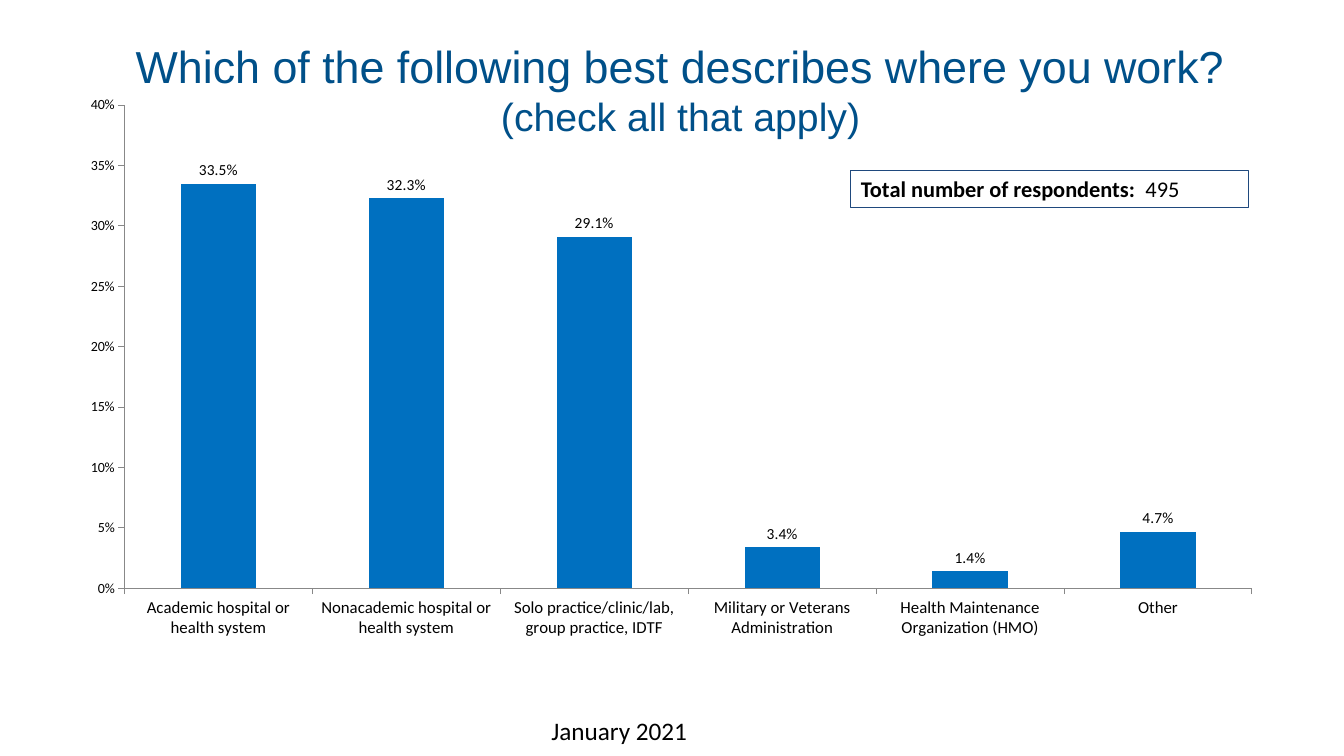
from lxml import etree
from pptx import Presentation
from pptx.chart.data import CategoryChartData
from pptx.dml.color import RGBColor
from pptx.enum.chart import XL_CHART_TYPE as ChartType, XL_LABEL_POSITION as LabelPosition
from pptx.enum.chart import XL_TICK_MARK as TickMark
from pptx.enum.shapes import MSO_SHAPE as Shape
from pptx.enum.text import MSO_ANCHOR as Anchor, PP_ALIGN as Align
from pptx.oxml.ns import qn
from pptx.util import Inches, Pt

# Content
TITLE = [("Which of the following best describes where you work? ", 32, False),
         ("(check all that apply)", 28, False)]
RESPONDENTS = [("Total number of respondents:  ", 16, True), ("495", 16, False)]
DATE = [("January 2021", 18, False)]
WORKPLACES = {
    "Academic hospital or health system": 0.335,
    "Nonacademic hospital or health system": 0.323,
    "Solo practice/clinic/lab, group practice, IDTF": 0.291,
    "Military or Veterans Administration": 0.034,
    "Health Maintenance Organization (HMO)": 0.014,
    "Other": 0.047,
}

# Places in inches: left, top, width, height
TITLE_AREA = (1, 0.16, 11.5, 1.45)
CHART_AREA = (0.67, 0.86, 12, 5.58)
RESPONDENTS_AREA = (8.44, 1.69, 3.94, 0.37)
DATE_AREA = (5.37, 7.05, 4.22, 0.4)
PLOT_SHARES = {"x": 0.047, "y": 0.033, "w": 0.932, "h": 0.859}

TITLE_BLUE = RGBColor(0x00, 0x50, 0x89)
BAR_BLUE = RGBColor(0x00, 0x70, 0xC0)
BORDER_BLUE = RGBColor(0x1F, 0x49, 0x7D)
AXIS_GRAY = RGBColor(0x88, 0x88, 0x88)
BLACK = RGBColor(0, 0, 0)


def place(area):
    return [Inches(length) for length in area]


def style_font(font, size, color=BLACK, name="Calibri"):
    font.size, font.name, font.color.rgb = Pt(size), name, color


def write(box, spans, color=BLACK, name="Calibri", align=Align.LEFT, anchor=Anchor.TOP):
    frame = box.text_frame
    frame.word_wrap = True
    frame.vertical_anchor = anchor
    para = frame.paragraphs[0]
    para.alignment = align
    para.font.name, para.font.color.rgb = name, color
    for text, size, bold in spans:
        span = para.add_run()
        span.text = text
        style_font(span.font, size, color, name)
        span.font.bold = bold


def style_axis(axis, size):
    axis.has_major_gridlines = False
    axis.major_tick_mark, axis.minor_tick_mark = TickMark.OUTSIDE, TickMark.NONE
    axis.format.line.color.rgb = AXIS_GRAY
    axis.format.line.width = Pt(0.75)
    style_font(axis.tick_labels.font, size)


def fix_plot_area(chart, shares):
    plot_area = chart.plots[0]._element.getparent()
    layout = plot_area.find(qn("c:layout"))
    if layout is None:
        layout = etree.Element(qn("c:layout"))
        plot_area.insert(0, layout)
    manual = etree.SubElement(layout, qn("c:manualLayout"))
    settings = {"layoutTarget": "inner", "xMode": "edge", "yMode": "edge", **shares}
    for tag, value in settings.items():
        etree.SubElement(manual, qn(f"c:{tag}")).set("val", str(value))


def add_workplace_chart(page):
    data = CategoryChartData(number_format="0.0%")
    data.categories = list(WORKPLACES)
    data.add_series("Series 1", list(WORKPLACES.values()))
    chart = page.shapes.add_chart(ChartType.COLUMN_CLUSTERED, *place(CHART_AREA), data).chart
    chart.has_legend = chart.has_title = False
    style_font(chart.font, 10)

    style_axis(chart.category_axis, 12)
    axis = chart.value_axis
    style_axis(axis, 10)
    axis.minimum_scale, axis.maximum_scale, axis.major_unit = 0, 0.4, 0.05
    axis.tick_labels.number_format = "0%"
    axis.tick_labels.number_format_is_linked = False

    plot = chart.plots[0]
    plot.gap_width, plot.vary_by_categories = 150, False
    fill = plot.series[0].format.fill
    fill.solid()
    fill.fore_color.rgb = BAR_BLUE
    labels = plot.series[0].data_labels
    labels.show_value, labels.position = True, LabelPosition.OUTSIDE_END
    labels.number_format, labels.number_format_is_linked = "0.0%", False
    style_font(labels.font, 11)
    fix_plot_area(chart, PLOT_SHARES)


def main():
    deck = Presentation()
    deck.slide_width, deck.slide_height = Inches(13.33), Inches(7.5)
    page = deck.slides.add_slide(deck.slide_layouts[6])

    # Title
    write(page.shapes.add_textbox(*place(TITLE_AREA)), TITLE, TITLE_BLUE, "Arial",
          Align.CENTER, Anchor.MIDDLE)

    # Respondent count
    box = page.shapes.add_shape(Shape.RECTANGLE, *place(RESPONDENTS_AREA))
    box.shadow.inherit = False
    box.fill.background()
    box.line.color.rgb, box.line.width = BORDER_BLUE, Pt(0.75)
    write(box, RESPONDENTS)

    # Chart and date
    add_workplace_chart(page)
    write(page.shapes.add_textbox(*place(DATE_AREA)), DATE)

    deck.save("out.pptx")


if __name__ == "__main__":
    main()
